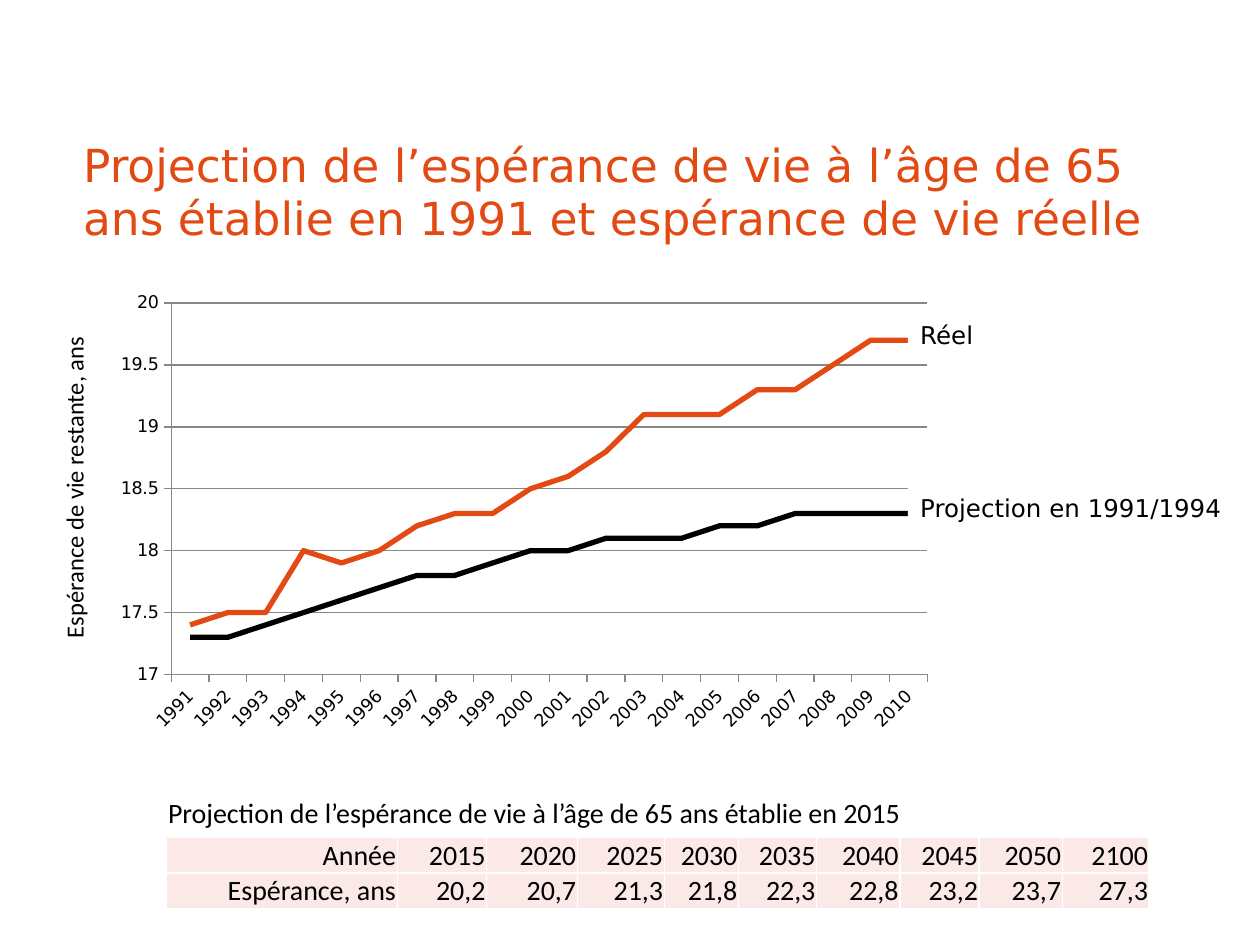
"""Build a slide comparing projected and actual life expectancy at 65."""
from typing import NamedTuple

from lxml import etree
from pptx import Presentation
from pptx.chart.data import CategoryChartData
from pptx.dml.color import RGBColor
from pptx.enum.chart import XL_CHART_TYPE, XL_TICK_MARK
from pptx.enum.text import MSO_ANCHOR, MSO_AUTO_SIZE, PP_ALIGN
from pptx.oxml import parse_xml
from pptx.oxml.ns import nsdecls, qn
from pptx.util import Inches, Pt

LINE_CHART = XL_CHART_TYPE.LINE
OUTSIDE = XL_TICK_MARK.OUTSIDE
BOTTOM = MSO_ANCHOR.BOTTOM
FIT_SHAPE = MSO_AUTO_SIZE.SHAPE_TO_FIT_TEXT
NO_FIT = MSO_AUTO_SIZE.NONE
LEFT, RIGHT = PP_ALIGN.LEFT, PP_ALIGN.RIGHT

BLACK = RGBColor(0x00, 0x00, 0x00)
WHITE = RGBColor(0xFF, 0xFF, 0xFF)
ORANGE = RGBColor(0xE3, 0x49, 0x12)
PINK = RGBColor(0xFA, 0xE9, 0xE7)
GREY = RGBColor(0x87, 0x87, 0x87)
SANS, BODY = "DejaVu Sans", "Calibri"

SLIDE_WIDTH, SLIDE_HEIGHT = Inches(10), Inches(7.5)
GRID_COLUMNS, GRID_ROWS = 100, 75
TITLE = ("Projection de l’espérance de vie à l’âge de 65 ans établie en 1991 "
         "et espérance de vie réelle")
YEARS = [str(year) for year in range(1991, 2011)]
TABLE_ROWS = (
    ("Année", "2015", "2020", "2025", "2030", "2035", "2040", "2045", "2050", "2100"),
    ("Espérance, ans", "20,2", "20,7", "21,3", "21,8", "22,3", "22,8", "23,2", "23,7", "27,3"),
)
TABLE_COLUMNS = (18.35, 7.1, 7.2, 6.9, 5.9, 6.2, 6.6, 6.3, 6.6, 6.9)
TABLE_ROW_HEIGHT = 2.75


class Area(NamedTuple):
    """A rectangle in grid columns and rows."""
    column: float
    row: float
    columns: float
    rows: float

    def lengths(self) -> tuple:
        """Return left, top, width and height on the slide."""
        return (across(self.column), down(self.row),
                across(self.columns), down(self.rows))


class Label(NamedTuple):
    """A single line of text placed on the slide."""
    text: str
    area: Area
    font: str = SANS
    size: int = 14
    align: PP_ALIGN = LEFT
    filled: bool = False
    vertical: bool = False


class Curve(NamedTuple):
    """One line of the chart."""
    name: str
    color: RGBColor
    values: tuple


LABELS = (
    Label("Réel", Area(72.05, 24.9, 6.3, 3.4), filled=True),
    Label("Projection de l’espérance de vie à l’âge de 65 ans établie en 2015",
          Area(12.35, 62.65, 60.9, 3.7), font=BODY, size=16),
    Label("Projection en 1991/1994", Area(72.05, 38.65, 26.5, 3.4), filled=True),
    Label("Espérance de vie restante, ans", Area(4.2, 25.75, 4.4, 25.2),
          font=BODY, align=RIGHT, vertical=True),
)
CURVES = (
    Curve("Series 1", BLACK, (17.3, 17.3, 17.4, 17.5, 17.6, 17.7, 17.8, 17.8, 17.9, 18,
                              18, 18.1, 18.1, 18.1, 18.2, 18.2, 18.3, 18.3, 18.3, 18.3)),
    Curve("Series 2", ORANGE, (17.4, 17.5, 17.5, 18, 17.9, 18, 18.2, 18.3, 18.3, 18.5,
                               18.6, 18.8, 19.1, 19.1, 19.1, 19.3, 19.3, 19.5, 19.7, 19.7)),
)


def across(columns: float) -> int:
    """Convert grid columns to a length."""
    return round(SLIDE_WIDTH * columns / GRID_COLUMNS)


def down(rows: float) -> int:
    """Convert grid rows to a length."""
    return round(SLIDE_HEIGHT * rows / GRID_ROWS)


def write(frame, text: str, *, font: str, size: int, color: RGBColor = BLACK,
          align: PP_ALIGN = LEFT, spacing=None) -> None:
    """Put one formatted paragraph into a text frame."""
    para = frame.paragraphs[0]
    para.alignment = align
    para.line_spacing = spacing
    span = para.add_run()
    span.text = text
    span.font.name, span.font.size = font, Pt(size)
    span.font.color.rgb = color


def add_title(page) -> None:
    """Place and format the title placeholder."""
    title = page.shapes.title
    title.left, title.top, title.width, title.height = Area(5.6, 10.8, 88.7, 9.1).lengths()
    frame = title.text_frame
    frame.vertical_anchor = BOTTOM
    frame.word_wrap, frame.auto_size = True, NO_FIT
    write(frame, TITLE, font=SANS, size=26, color=ORANGE, spacing=Pt(30))


def add_label(page, label: Label) -> None:
    """Draw a label as a text box."""
    box = page.shapes.add_textbox(*label.area.lengths())
    if label.filled:
        box.fill.solid()
        box.fill.fore_color.rgb = WHITE
    frame = box.text_frame
    frame.word_wrap, frame.auto_size = False, FIT_SHAPE
    if label.vertical:
        box.element.txBody.find(qn("a:bodyPr")).set("vert", "vert270")
    write(frame, label.text, font=label.font, size=label.size, align=label.align)


def style_line(line, color: RGBColor, width: float) -> None:
    """Give a line its colour and width in points."""
    line.color.rgb = color
    line.width = Pt(width)


def set_plot_area(chart, **shares: float) -> None:
    """Fix the inner plot area as shares of the chart."""
    plot_area = chart.element.find(".//" + qn("c:plotArea"))
    for old in plot_area.findall(qn("c:layout")):
        plot_area.remove(old)
    layout = parse_xml(f"<c:layout {nsdecls('c')}><c:manualLayout/></c:layout>")
    settings = {"layoutTarget": "inner", "xMode": "edge", "yMode": "edge", **shares}
    for name, value in settings.items():
        etree.SubElement(layout[0], qn(f"c:{name}")).set("val", str(value))
    plot_area.insert(0, layout)


def add_line_chart(page) -> None:
    """Draw the life expectancy curves."""
    data = CategoryChartData(number_format="General")
    data.categories = YEARS
    for curve in CURVES:
        data.add_series(curve.name, curve.values)
    chart = page.shapes.add_chart(LINE_CHART, *Area(8.25, 22.6, 66.7, 36.4).lengths(), data).chart
    chart.has_legend = chart.has_title = False
    chart.font.name, chart.font.size = SANS, Pt(10)
    chart.font.color.rgb = BLACK
    chart.plots[0].vary_by_categories = False
    for series, curve in zip(chart.plots[0].series, CURVES):
        series.smooth = False
        style_line(series.format.line, curve.color, 3)
    years, ages = chart.category_axis, chart.value_axis
    for axis in (years, ages):
        axis.major_tick_mark = OUTSIDE
        style_line(axis.format.line, GREY, 0.75)
        axis.tick_labels.font.size = Pt(10)
    years_text = chart.element.find(".//" + qn("c:catAx")).find(qn("c:txPr"))
    years_text.find(qn("a:bodyPr")).set("rot", "-2700000")
    ages.minimum_scale, ages.maximum_scale, ages.major_unit = 17, 20, 0.5
    ages.has_major_gridlines = True
    style_line(ages.major_gridlines.format.line, GREY, 0.75)
    set_plot_area(chart, x=0.08, y=0.04, w=0.9, h=0.81)


def add_borders(cell) -> None:
    """Draw white borders round a table cell."""
    properties = cell._tc.get_or_add_tcPr()
    for index, side in enumerate(("lnL", "lnR", "lnT", "lnB")):
        properties.insert(index, parse_xml(
            f'<a:{side} {nsdecls("a")} w="12700"><a:solidFill>'
            f'<a:srgbClr val="{WHITE}"/></a:solidFill></a:{side}>'))


def add_projection_table(page) -> None:
    """Draw the table of projected values."""
    area = Area(13.18, 66.45, sum(TABLE_COLUMNS), TABLE_ROW_HEIGHT * len(TABLE_ROWS))
    table = page.shapes.add_table(len(TABLE_ROWS), len(TABLE_COLUMNS), *area.lengths()).table
    table.first_row = table.horz_banding = False
    for column, width in zip(table.columns, TABLE_COLUMNS):
        column.width = across(width)
    for row, texts in zip(table.rows, TABLE_ROWS):
        row.height = down(TABLE_ROW_HEIGHT)
        for cell, text in zip(row.cells, texts):
            cell.margin_left = cell.margin_right = cell.margin_top = Inches(0.01)
            cell.margin_bottom = 0
            cell.vertical_anchor = BOTTOM
            cell.fill.solid()
            cell.fill.fore_color.rgb = PINK
            add_borders(cell)
            write(cell.text_frame, text, font=BODY, size=16, align=RIGHT)


def main() -> None:
    """Build and save the deck."""
    deck = Presentation()
    deck.slide_width, deck.slide_height = SLIDE_WIDTH, SLIDE_HEIGHT
    page = deck.slides.add_slide(deck.slide_layouts[5])
    add_title(page)
    add_line_chart(page)
    add_projection_table(page)
    for label in LABELS:
        add_label(page, label)
    deck.save("out.pptx")


if __name__ == "__main__":
    main()
